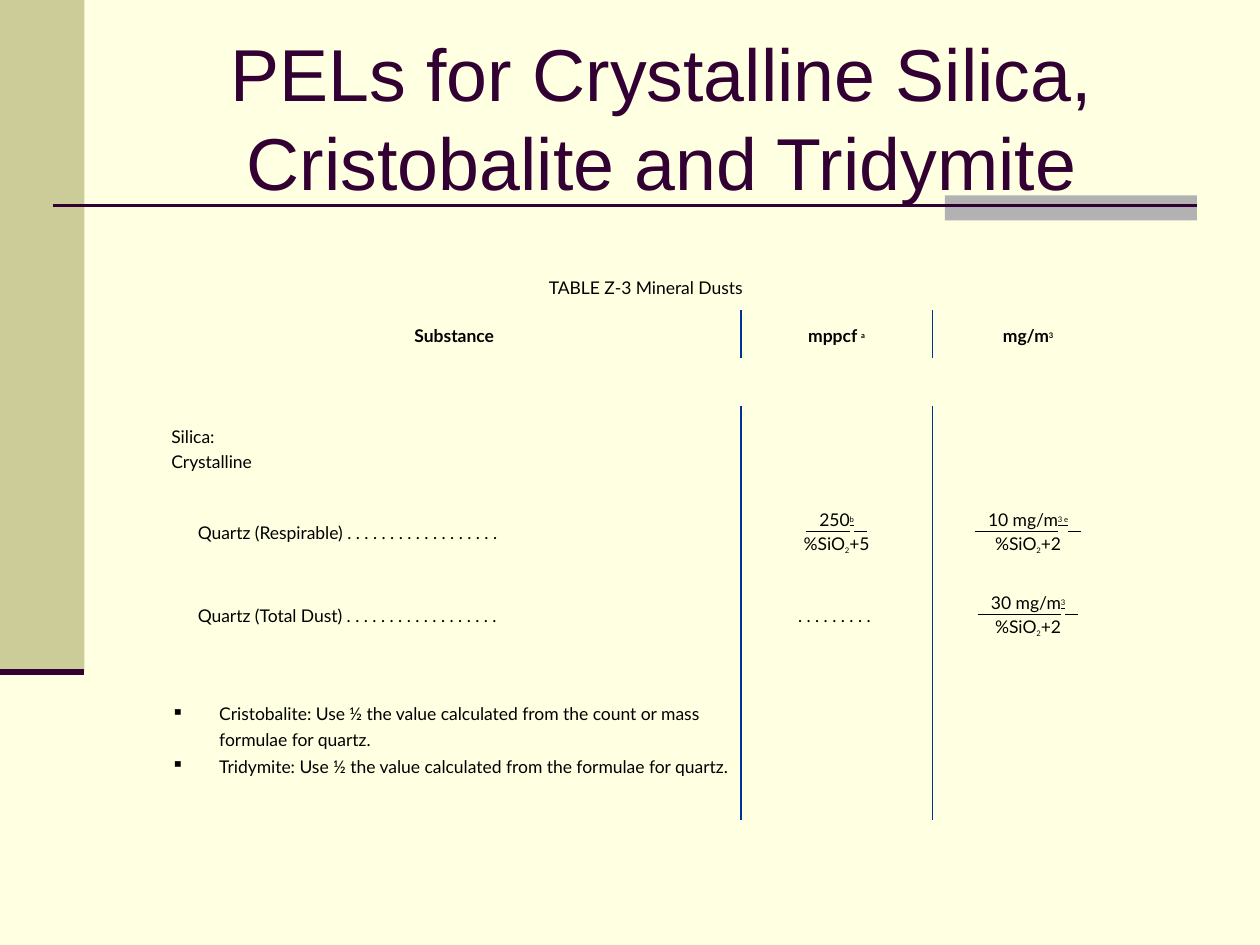
from dataclasses import dataclass

from lxml.etree import SubElement
from pptx import Presentation
from pptx.dml.color import RGBColor
from pptx.enum.shapes import MSO_CONNECTOR, MSO_SHAPE
from pptx.enum.text import MSO_ANCHOR, MSO_AUTO_SIZE, PP_ALIGN
from pptx.oxml import parse_xml
from pptx.oxml.ns import nsdecls, qn
from pptx.util import Inches, Pt

CREAM, KHAKI, GREY = "FFFFE1", "CCCC99", "B2B2B2"
PLUM, NAVY, BLACK = "330033", "003399", "000000"
PLAIN_STYLE = "{2D5ABB26-0587-4C30-8999-92F81FD0307C}"
BAR_END = "   "  # non-breaking, so the underline extends past the numerator
LEADER = ". " * 18


@dataclass
class Span:
    text: str
    baseline: int = 0
    bold: bool = False
    underline: bool = False


@dataclass
class Line:
    """One paragraph; each inner list of spans is a line of it."""
    rows: list[list[Span]]
    align: PP_ALIGN = PP_ALIGN.CENTER
    spacing: float = 14.2
    left: float = 0
    bullet: str = ""


@dataclass
class Band:
    left: float
    top: float
    width: float
    height: float
    color: str


@dataclass
class Rule:
    left: float
    right: float
    y: float
    weight: float


def rgb(color: str) -> RGBColor:
    return RGBColor.from_string(color)


def apply(target, values: dict) -> None:
    for name, value in values.items():
        setattr(target, name, value)


def fraction(top: str, raised: str, bottom: str) -> Line:
    numerator = [Span(BAR_END + top, underline=True),
                 Span(raised, 30, underline=True),
                 Span(BAR_END, underline=True)]
    return Line([numerator, [Span("%SiO"), Span("2", -25), Span(bottom)]])


def left_line(*texts: str, **options) -> Line:
    return Line([[Span(text)] for text in texts], PP_ALIGN.LEFT, **options)


def bullet_line(text: str) -> Line:
    return left_line(text, spacing=15, left=0.38, bullet="▪")


def draw_band(page, band: Band) -> None:
    box = page.shapes.add_shape(
        MSO_SHAPE.RECTANGLE,
        *map(Inches, (band.left, band.top, band.width, band.height)))
    box.shadow.inherit = False
    box.fill.solid()
    box.fill.fore_color.rgb = rgb(band.color)
    box.line.fill.background()


def draw_rule(page, rule: Rule) -> None:
    line = page.shapes.add_connector(
        MSO_CONNECTOR.STRAIGHT,
        *map(Inches, (rule.left, rule.y, rule.right, rule.y)))
    line.line.color.rgb = rgb(PLUM)
    line.line.width = Pt(rule.weight)
    SubElement(line._element.spPr, qn("a:effectLst"))


def write_line(para, line: Line) -> None:
    apply(para, {"alignment": line.align, "line_spacing": Pt(line.spacing)})
    properties = para._p.get_or_add_pPr()
    if line.left:
        properties.set("marL", str(Inches(line.left)))
    if line.bullet:
        properties.set("indent", str(-Inches(line.left)))
        SubElement(properties, qn("a:buChar")).set("char", line.bullet)
    for number, row in enumerate(line.rows):
        if number:
            para.add_line_break()
        for item in row:
            span = para.add_run()
            span.text = item.text
            apply(span.font, {"name": "Lato", "bold": item.bold,
                              "size": Pt(7.5 if item.baseline else 10),
                              "underline": item.underline})
            span.font.color.rgb = rgb(BLACK)
            if item.baseline:
                span._r.get_or_add_rPr().set("baseline", str(item.baseline * 1000))


def add_borders(cell, sides: str) -> None:
    properties = cell._tc.get_or_add_tcPr()
    for place, side in enumerate(sides):
        properties.insert(place, parse_xml(
            f'<a:ln{side} {nsdecls("a")} w="12700"><a:solidFill>'
            f'<a:srgbClr val="{NAVY}"/></a:solidFill></a:ln{side}>'))


def draw_table(page, rows: list[list[list[Line]]], widths: list[float],
               heights: list[float]) -> None:
    table = page.shapes.add_table(
        len(heights), len(widths), Inches(1.33), Inches(2.08),
        Inches(sum(widths)), Inches(sum(heights))).table
    apply(table, {"first_row": False, "horz_banding": False})
    table._tbl.tblPr.find(qn("a:tableStyleId")).text = PLAIN_STYLE
    for column, width in zip(table.columns, widths):
        column.width = Inches(width)
    for row, height in zip(table.rows, heights):
        row.height = Inches(height)

    margins = {f"margin_{side}": Inches(0.03)
               for side in ("left", "right", "top", "bottom")}
    for row_number, row in enumerate(rows):
        spanning = len(row) == 1
        if spanning:
            table.cell(row_number, 0).merge(table.cell(row_number, len(widths) - 1))
        for column_number, lines in enumerate(row):
            cell = table.cell(row_number, column_number)
            apply(cell, margins | {"vertical_anchor": MSO_ANCHOR.MIDDLE})
            cell.fill.background()
            if not spanning:
                add_borders(cell, ("R", "LR", "L")[column_number])
            frame = cell.text_frame
            for number, line in enumerate(lines):
                write_line(frame.add_paragraph() if number else frame.paragraphs[0], line)


def write_title(page, text: str) -> None:
    title = page.shapes.title
    apply(title, {"left": Inches(1), "top": Inches(0.3),
                  "width": Inches(8.5), "height": Inches(1.25)})
    frame = title.text_frame
    frame.text = text
    apply(frame, {"vertical_anchor": MSO_ANCHOR.MIDDLE, "word_wrap": True,
                  "auto_size": MSO_AUTO_SIZE.NONE})
    para = frame.paragraphs[0]
    para.alignment = PP_ALIGN.CENTER
    span = para.runs[0]
    apply(span.font, {"name": "Arial", "size": Pt(42)})
    span.font.color.rgb = rgb(PLUM)
    page.shapes._spTree.append(title._element)  # bring to front


BANDS = [Band(0, 0, 0.67, 5.33, KHAKI), Band(7.5, 1.55, 2, 0.2, GREY)]
RULES = [Rule(0.42, 9.5, 1.63, 1.5), Rule(0, 0.67, 5.33, 3.5)]
ROWS = [
    [[Line([[Span("TABLE Z-3 Mineral Dusts")]])]],
    [[Line([[Span("Substance", bold=True)]])],
     [Line([[Span("mppcf ", bold=True), Span("a", 30, bold=True)]])],
     [Line([[Span("mg/m", bold=True), Span("3", 30, bold=True)]])]],
    [[]],
    [[left_line("Silica:", "Crystalline")], [], []],
    [[left_line("Quartz (Respirable) " + LEADER.strip(), left=0.21)],
     [fraction("250", "b", "+5")], [fraction("10 mg/m", "3 e", "+2")]],
    [[left_line("Quartz (Total Dust) " + LEADER.strip(), left=0.21)],
     [Line([[Span(". " * 9)]])], [fraction("30 mg/m", "3", "+2")]],
    [[bullet_line("Cristobalite: Use ½ the value calculated from the count "
                  "or mass formulae for quartz."),
      bullet_line("Tridymite: Use ½ the value calculated from the formulae "
                  "for quartz.")], [], []],
]


def main() -> None:
    deck = Presentation()
    apply(deck, {"slide_width": Inches(10), "slide_height": Inches(7.5)})
    page = deck.slides.add_slide(deck.slide_layouts.get_by_name("Title Only"))
    page.background.fill.solid()
    page.background.fill.fore_color.rgb = rgb(CREAM)
    for band in BANDS:
        draw_band(page, band)
    for rule in RULES:
        draw_rule(page, rule)
    draw_table(page, ROWS, [4.55, 1.52, 1.52], [0.38] * 3 + [0.66] * 3 + [1.31])
    write_title(page, "PELs for Crystalline Silica, Cristobalite and Tridymite")
    deck.save("out.pptx")


if __name__ == "__main__":
    main()
